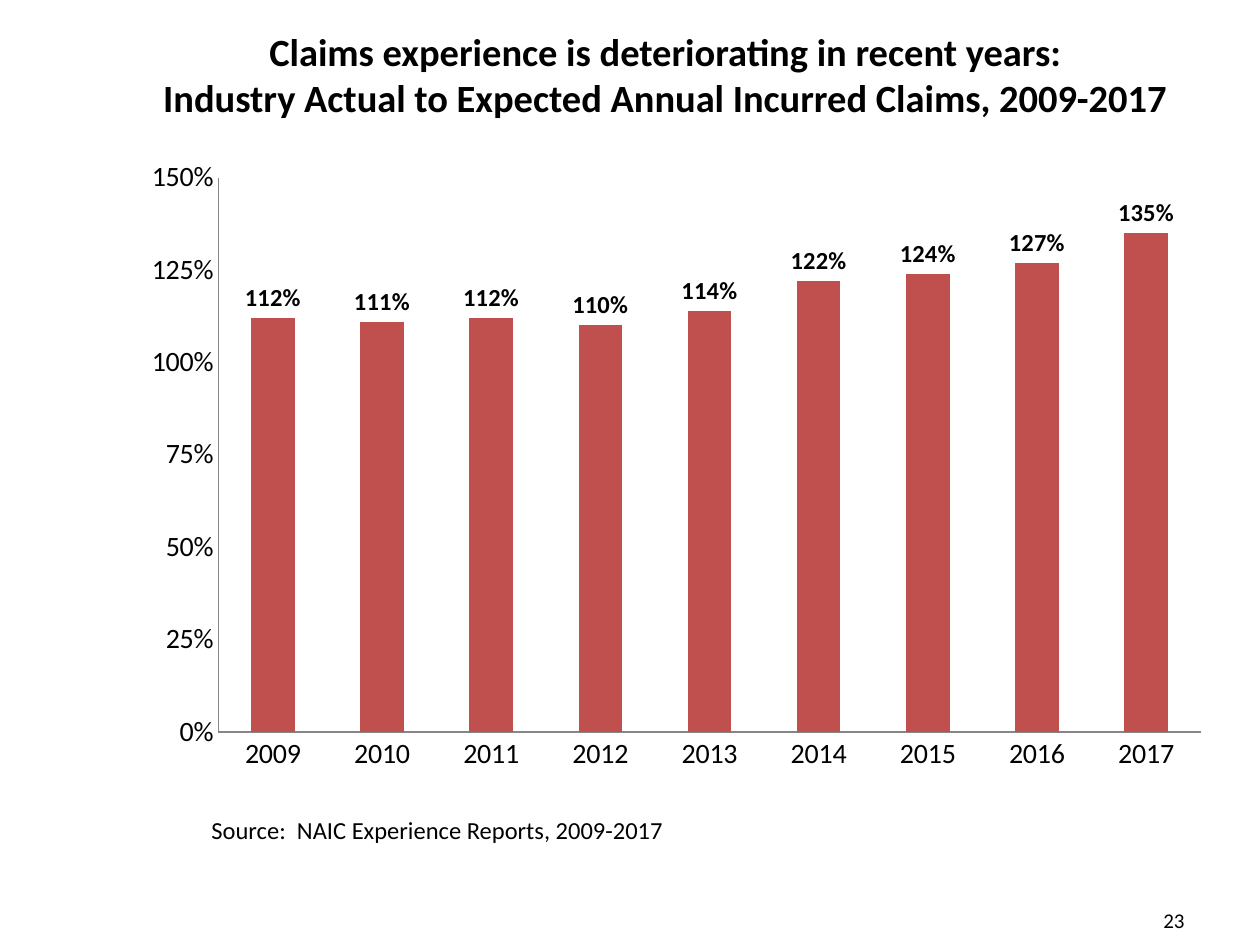
import dataclasses

import pptx
import pptx.chart.data
import pptx.dml.color
import pptx.enum.chart
import pptx.enum.text
import pptx.oxml
import pptx.util

Inches = pptx.util.Inches
Pt = pptx.util.Pt
ALIGN = pptx.enum.text.PP_ALIGN
ANCHOR = pptx.enum.text.MSO_ANCHOR


@dataclasses.dataclass(frozen=True)
class Theme:
    """Colours, typeface and type sizes of the slide."""
    font: str = "Calibri"
    ink: str = "000000"
    bar: str = "C0504D"
    axis: str = "868686"
    title: int = 22
    tick: int = 16
    body: int = 14
    number: int = 12


THEME = Theme()
CLAIMS = {
    "2009": 1.12, "2010": 1.11, "2011": 1.12, "2012": 1.10, "2013": 1.14,
    "2014": 1.22, "2015": 1.24, "2016": 1.27, "2017": 1.35,
}


def rgb(value):
    """Turn a hex string into a colour."""
    return pptx.dml.color.RGBColor.from_string(value)


def style_font(font, size, bold=False):
    """Apply the theme's typeface and ink to a font."""
    font.name = THEME.font
    font.size = Pt(size)
    font.bold = bold
    font.color.rgb = rgb(THEME.ink)


def add_text(slide, box, text, size=THEME.body, bold=False,
             align=ALIGN.LEFT, anchor=ANCHOR.TOP):
    """Place formatted text in a box given in inches."""
    frame = slide.shapes.add_textbox(*map(Inches, box)).text_frame
    frame.word_wrap = True
    frame.vertical_anchor = anchor
    paragraph = frame.paragraphs[0]
    paragraph.text = text
    paragraph.alignment = align
    for run in paragraph.runs:
        style_font(run.font, size, bold)


def style_axis(axis):
    """Give an axis its line, labels and no ticks or gridlines."""
    axis.has_major_gridlines = False
    axis.major_tick_mark = pptx.enum.chart.XL_TICK_MARK.NONE
    axis.minor_tick_mark = pptx.enum.chart.XL_TICK_MARK.NONE
    axis.format.line.color.rgb = rgb(THEME.axis)
    axis.format.line.width = Pt(0.75)
    style_font(axis.tick_labels.font, THEME.tick)


def set_plot_area(chart, x, y, w, h):
    """Fix the inner plot area as fractions of the chart."""
    plot_area = chart.plots[0]._element.getparent()
    for layout in plot_area.findall(pptx.oxml.ns.qn("c:layout")):
        plot_area.remove(layout)
    fields = {"layoutTarget": "inner", "xMode": "edge", "yMode": "edge",
              "x": x, "y": y, "w": w, "h": h}
    settings = "".join(f'<c:{tag} val="{val}"/>' for tag, val in fields.items())
    plot_area.insert(0, pptx.oxml.parse_xml(
        f'<c:layout {pptx.oxml.ns.nsdecls("c")}>'
        f"<c:manualLayout>{settings}</c:manualLayout></c:layout>"))


def add_claims_chart(slide, box):
    """Draw the actual-to-expected claims columns in a box."""
    data = pptx.chart.data.CategoryChartData(number_format="0%")
    data.categories = list(CLAIMS)
    data.add_series("Series 1", list(CLAIMS.values()))
    chart = slide.shapes.add_chart(
        pptx.enum.chart.XL_CHART_TYPE.COLUMN_CLUSTERED,
        *map(Inches, box), data).chart
    chart.has_legend = False
    chart.has_title = False
    style_font(chart.font, THEME.tick)
    set_plot_area(chart, 0.089, 0.048, 0.886, 0.88)

    style_axis(chart.category_axis)
    ratio_axis = chart.value_axis
    style_axis(ratio_axis)
    ratio_axis.minimum_scale = 0
    ratio_axis.maximum_scale = 1.5
    ratio_axis.major_unit = 0.25
    ratio_axis.tick_labels.number_format = "0%"
    ratio_axis.tick_labels.number_format_is_linked = False

    columns = chart.plots[0]
    columns.gap_width = 150
    columns.vary_by_categories = False
    claims = columns.series[0]
    claims.format.fill.solid()
    claims.format.fill.fore_color.rgb = rgb(THEME.bar)
    labels = claims.data_labels
    labels.show_value = True
    labels.number_format = "0%"
    labels.number_format_is_linked = False
    labels.position = pptx.enum.chart.XL_LABEL_POSITION.OUTSIDE_END
    style_font(labels.font, THEME.body, bold=True)


def add_title(slide, box):
    """Place the two-line heading in a box."""
    add_text(slide, box,
             "Claims experience is deteriorating in recent years:\v"
             "Industry Actual to Expected Annual Incurred Claims, 2009-2017",
             size=THEME.title, bold=True, align=ALIGN.CENTER,
             anchor=ANCHOR.MIDDLE)


def add_source(slide, box):
    """Place the source line in a box."""
    add_text(slide, box, "Source:  NAIC Experience Reports, 2009-2017")


def add_page_number(slide, box):
    """Place the page number in a box."""
    add_text(slide, box, "23", size=THEME.number, align=ALIGN.RIGHT,
             anchor=ANCHOR.MIDDLE)


def main():
    """Build and save the slide."""
    deck = pptx.Presentation()
    deck.slide_width, deck.slide_height = Inches(10), Inches(7.5)
    slide = deck.slides.add_slide(deck.slide_layouts[6])
    add_title(slide, (0.81, 0.17, 8.94, 0.84))
    add_claims_chart(slide, (0.95, 1.17, 8.8, 5))
    add_source(slide, (1.58, 6.42, 4.08, 0.34))
    add_page_number(slide, (7.17, 7.1, 2.33, 0.4))
    deck.save("out.pptx")


if __name__ == "__main__":
    main()
